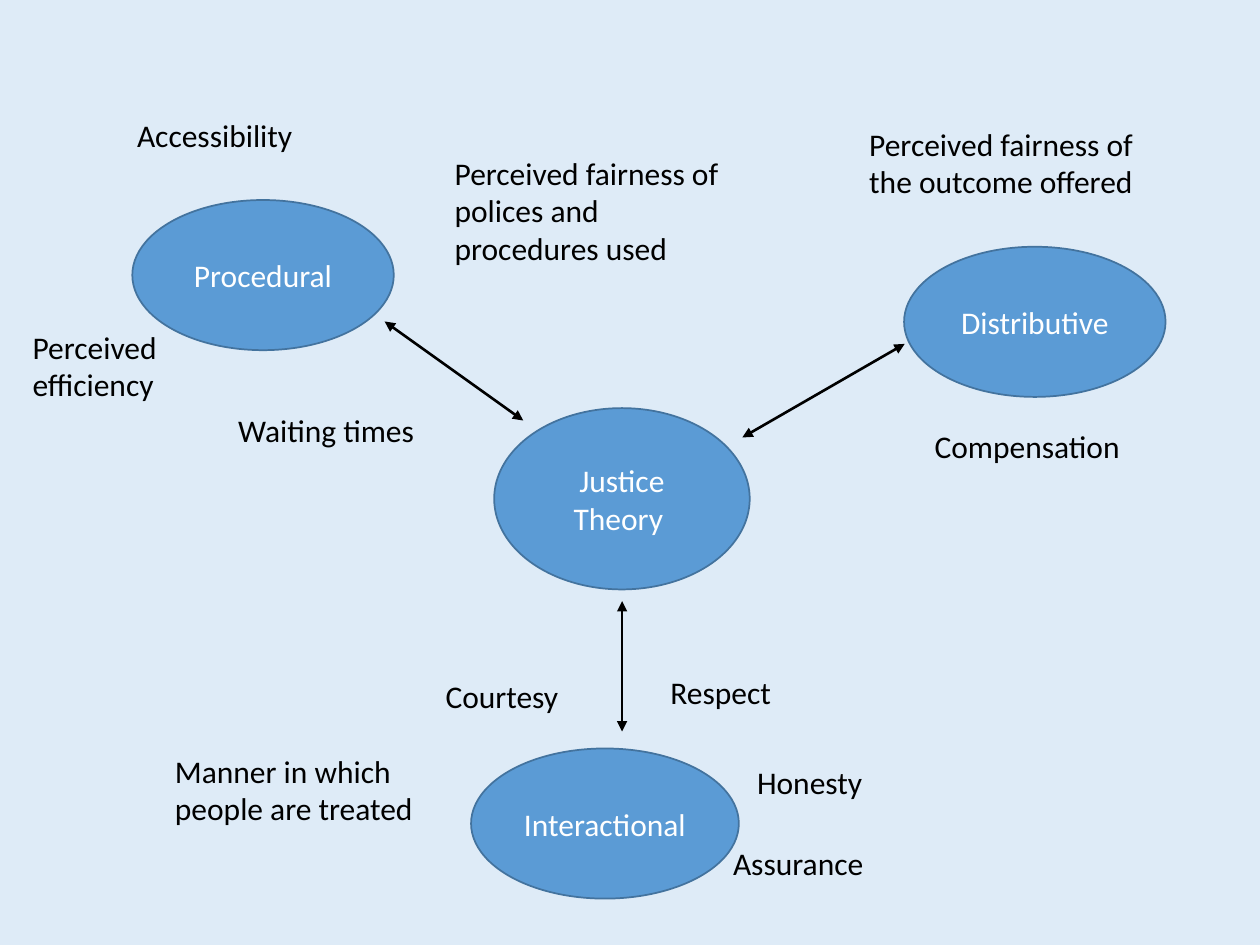
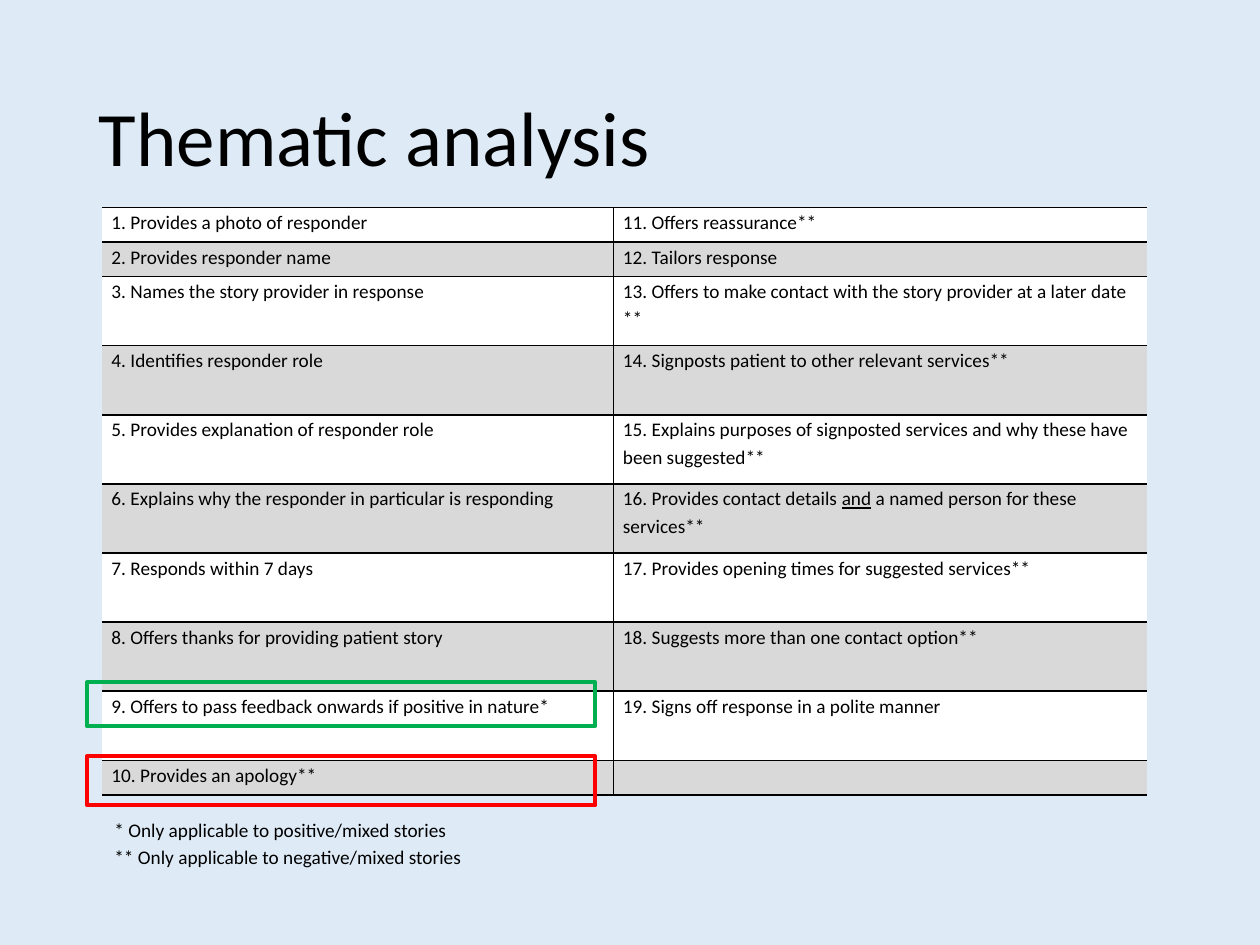
from lxml import etree
from pptx import Presentation
from pptx.dml.color import RGBColor
from pptx.enum import shapes, text
from pptx.oxml import ns
from pptx.util import Pt

BLACK, WHITE, GREY = "000000", "FFFFFF", "D9D9D9"
SKY, BLUE, NAVY = "DEEBF7", "5B9BD5", "43739E"
GREEN, RED = "00B050", "FF0000"


def rgb(code):
    return RGBColor.from_string(code)


def sub(node, tag, **attrs):
    return etree.SubElement(node, ns.qn(tag), attrs)


class Deck:
    """Holds the shared style and the slide being drawn."""

    font = "Calibri"
    size = 18

    def __init__(self):
        self.show = Presentation()
        self.show.slide_width, self.show.slide_height = Pt(720), Pt(540)

    def page(self):
        self.slide = self.show.slides.add_slide(self.show.slide_layouts[6])
        back = self.slide.background.fill
        back.solid()
        back.fore_color.rgb = rgb(SKY)

    def runs(self, para, words, size=None, color=BLACK, line=None):
        """Add words as runs; every second piece between underscores is underlined."""
        if line:
            para.line_spacing = line
        for i, part in enumerate(words.split("_")):
            run = para.add_run()
            run.text = part
            font = run.font
            font.name, font.size = self.font, Pt(size or self.size)
            font.color.rgb = rgb(color)
            if i % 2:
                font.underline = True

    def label(self, words, x, y, w, h, size=None, line=None, mid=False):
        frame = self.slide.shapes.add_textbox(Pt(x), Pt(y), Pt(w), Pt(h)).text_frame
        frame.word_wrap = True
        if mid:
            frame.vertical_anchor = text.MSO_ANCHOR.MIDDLE
        for i, row in enumerate(words.split("\n")):
            para = frame.add_paragraph() if i else frame.paragraphs[0]
            self.runs(para, row, size, line=line)

    def shape(self, kind, x, y, w, h, edge, width):
        item = self.slide.shapes.add_shape(kind, Pt(x), Pt(y), Pt(w), Pt(h))
        item.shadow.inherit = False
        item.fill.background()
        item.line.color.rgb = rgb(edge)
        item.line.width = Pt(width)
        return item

    def oval(self, words, x, y, w, h):
        item = self.shape(shapes.MSO_SHAPE.OVAL, x, y, w, h, NAVY, 1)
        item.fill.solid()
        item.fill.fore_color.rgb = rgb(BLUE)
        frame = item.text_frame
        frame.word_wrap = True
        frame.vertical_anchor = text.MSO_ANCHOR.MIDDLE
        para = frame.paragraphs[0]
        para.alignment = text.PP_ALIGN.CENTER
        self.runs(para, words, color=WHITE)

    def frame(self, x, y, w, h, edge):
        self.shape(shapes.MSO_SHAPE.RECTANGLE, x, y, w, h, edge, 2.25)

    def arrow(self, *ends):
        """Draw a line with a head at both ends."""
        item = self.slide.shapes.add_connector(
            shapes.MSO_CONNECTOR.STRAIGHT, *map(Pt, ends))
        item.line.color.rgb = rgb(BLACK)
        item.line.width = Pt(1.5)
        line = item.line._get_or_add_ln()
        for tag in ("a:headEnd", "a:tailEnd"):
            sub(line, tag, type="triangle")
        sub(item._element.spPr, "a:effectLst")

    def edges(self, cell, sides):
        """Rule the named sides of a cell and clear the others."""
        props = cell._tc.get_or_add_tcPr()
        for i, side in enumerate("LRTB"):
            line = etree.Element(ns.qn("a:ln" + side), w=str(Pt(1)))
            if side in sides:
                sub(sub(line, "a:solidFill"), "a:srgbClr", val=BLACK)
            else:
                sub(line, "a:noFill")
            props.insert(i, line)

    def cell(self, cell, words, fill, sides):
        cell.margin_left = cell.margin_right = Pt(5.4)
        cell.margin_top = cell.margin_bottom = 0
        cell.fill.solid()
        cell.fill.fore_color.rgb = rgb(fill)
        self.edges(cell, sides)
        para = cell.text_frame.paragraphs[0]
        para.space_after = Pt(10)
        if words:
            self.runs(para, words, 11, line=1.15)
        else:
            para._p.get_or_add_endParaRPr().set("sz", "1100")

    def table(self, rows, x, y, cols, highs):
        grid = self.slide.shapes.add_table(
            len(rows), len(cols), Pt(x), Pt(y), Pt(sum(cols)), Pt(sum(highs))).table
        grid.first_row = grid.horz_banding = False
        for col, wide in zip(grid.columns, cols):
            col.width = Pt(wide)
        for r, (row, high) in enumerate(zip(rows, highs)):
            grid.rows[r].height = Pt(high)
            for c, words in enumerate(row):
                self.cell(grid.cell(r, c), words, GREY if r % 2 else WHITE,
                          "LTB" if c else "RTB")


LABELS = [
    ("Perceived fairness of polices and procedures used", 252.7, 84.2, 176, 73),
    ("Waiting times", 129, 231.2, 129, 29),
    ("Perceived efficiency", 11.5, 183.7, 129, 51),
    ("Accessibility", 71.2, 62.6, 129, 29),
    ("Manner in which people are treated", 92.9, 426, 176, 51),
    ("Courtesy", 247.5, 383.2, 129, 29),
    ("Respect", 376, 381.2, 129, 29),
    ("Honesty", 425.5, 432.7, 129, 29),
    ("Assurance", 411.8, 479, 129, 29),
    ("Perceived fairness of the outcome offered", 489.6, 67.7, 176, 51),
    ("Compensation", 527, 240.5, 129, 29),
]
OVALS = [
    ("Justice Theory ", 282.4, 233.2, 146, 103.6),
    ("Procedural", 75.6, 114.3, 149.4, 85.8),
    ("Interactional", 269.2, 427.7, 153, 85.8),
    ("Distributive", 516.6, 141, 149.4, 85.8),
]
ARROWS = [
    (219.8, 183.7, 299, 240.3),
    (424.2, 250, 517, 196.5),
    (355.5, 343.5, 355.5, 418),
]
THEMES = [
    ("Provides a photo of responder", "Offers reassurance**"),
    ("Provides responder name", "Tailors response"),
    ("Names the story provider in response",
     "Offers to make contact with the story provider at a later date **"),
    ("Identifies responder role",
     "Signposts patient to other relevant services**"),
    ("Provides explanation of responder role",
     "Explains purposes of signposted services and why these have been suggested**"),
    ("Explains why the responder in particular is responding",
     "Provides contact details _and_ a named person for these services**"),
    ("Responds within 7 days",
     "Provides opening times for suggested services**"),
    ("Offers thanks for providing patient story",
     "Suggests more than one contact option**"),
    ("Offers to pass feedback onwards if positive in nature*",
     "Signs off response in a polite manner"),
    ("Provides an apology**", ""),
]
NOTES = ("* Only applicable to positive/mixed stories\n"
         "** Only applicable to negative/mixed stories")


def theory(deck):
    deck.page()
    for item in LABELS:
        deck.label(*item)
    for item in OVALS:
        deck.oval(*item)
    for ends in ARROWS:
        deck.arrow(*ends)


def themes(deck):
    deck.page()
    deck.label("Thematic analysis", 49.5, 28.75, 621, 104.4, 44, 0.9, True)
    count = len(THEMES)
    rows = [(f"{i}. {left}", f"{i + count}. {right}" if right else "")
            for i, (left, right) in enumerate(THEMES, 1)]
    low, high = 19.75, 39.5
    highs = [low] * 2 + [high] * 7 + [low]
    deck.table(rows, 58.3, 118.6, (292.3, 304.8), highs)
    deck.label(NOTES, 58.3, 462.2, 371.5, 43.2, 11, 1.15)
    deck.frame(49.7, 390, 290.6, 25, GREEN)
    deck.frame(49.7, 432.2, 290.6, 28, RED)


def main():
    deck = Deck()
    theory(deck)
    themes(deck)
    deck.show.save("out.pptx")


if __name__ == "__main__":
    main()
